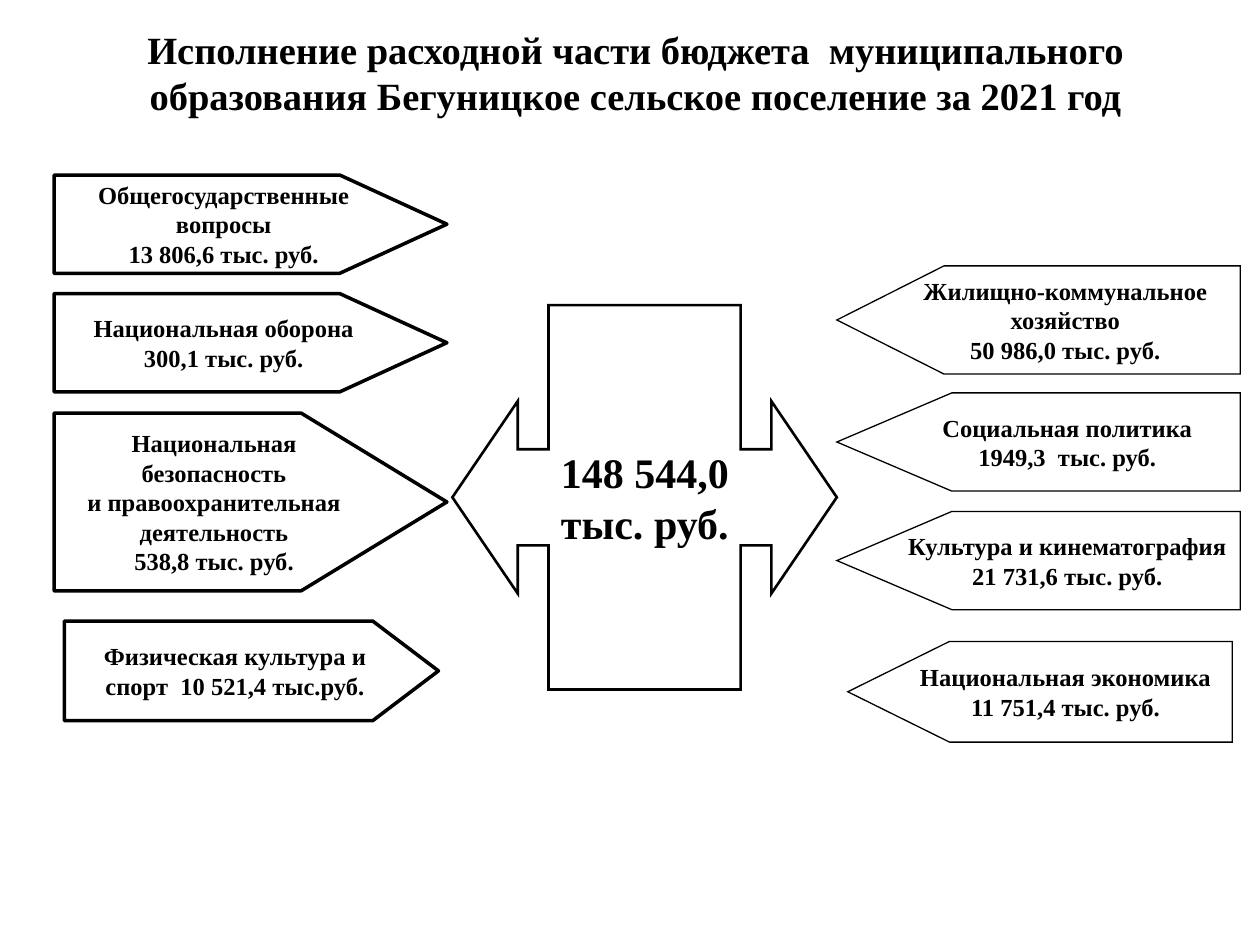
"""Builds the slide on budget spending of the Begunitskoye settlement for 2021."""
from lxml.etree import SubElement
from pptx import Presentation
from pptx.dml.color import RGBColor
from pptx.enum.shapes import MSO_SHAPE
from pptx.enum.text import MSO_ANCHOR, PP_ALIGN
from pptx.oxml.ns import qn
from pptx.util import Cm, Pt

COLORS = {"ink": "000000", "paper": "FFFFFF"}
FONT = "Times New Roman"


def write_text(shape, lines, size, anchor=MSO_ANCHOR.MIDDLE, wrap=True):
    frame = shape.text_frame
    frame.text = "\n".join(lines)
    frame.word_wrap = wrap
    frame.vertical_anchor = anchor
    for para in frame.paragraphs:
        para.alignment = PP_ALIGN.CENTER
        for span in para.runs:
            span.font.name = FONT
            span.font.size = Pt(size)
            span.font.bold = True
            span.font.color.rgb = RGBColor.from_string(COLORS["ink"])


def add_outlined(kind, place, adjustments, line_width, rotation=0):
    shape = slide.shapes.add_shape(kind, *[Cm(length) for length in place])
    shape.shadow.inherit = False
    shape.rotation = rotation
    for index, value in enumerate(adjustments):
        shape.adjustments[index] = value
    shape.fill.solid()
    shape.fill.fore_color.rgb = RGBColor.from_string(COLORS["paper"])
    shape.line.color.rgb = RGBColor.from_string(COLORS["ink"])
    shape.line.width = Pt(line_width)
    join = "a:miter" if rotation else "a:round"
    SubElement(shape.line._get_or_add_ln(), qn(join))
    return shape


deck = Presentation()
deck.slide_width, deck.slide_height = Cm(25.4), Cm(19.05)
slide = deck.slides.add_slide(deck.slide_layouts[6])

title = slide.shapes.add_textbox(Cm(1), Cm(0.4), Cm(23.62), Cm(1.98))
title_text = (
    "Исполнение расходной части бюджета  муниципального "
    "образования Бегуницкое сельское поселение за 2021 год"
)
write_text(title, [title_text], 22, MSO_ANCHOR.BOTTOM)
title.text_frame.margin_left = title.text_frame.margin_right = 0
title.text_frame.margin_bottom = 0

total = add_outlined(
    MSO_SHAPE.UP_DOWN_ARROW_CALLOUT,
    (9.12, 6.15, 7.75, 7.75),
    (0.25, 0.25, 0.17, 0.5),
    1.5,
    270,
)
write_text(total, ["148 544,0", "тыс. руб."], 24, wrap=False)
total.text_frame._txBody.bodyPr.set("vert", "eaVert")

right_items = [
    ((16.87, 5.36, 8.13, 2.18), 0.99, True,
     ["Жилищно-коммунальное хозяйство", "50 986,0 тыс. руб."]),
    ((16.87, 7.92, 8.13, 1.98), 1.17, False,
     ["Социальная политика", "1949,3  тыс. руб."]),
    ((16.87, 10.31, 8.13, 1.98), 1.17, True,
     ["Культура и кинематография", "21 731,6 тыс. руб."]),
    ((17.09, 12.93, 7.75, 2.03), 1.01, False,
     ["Национальная экономика", "11 751,4 тыс. руб."]),
]
for place, point, wrap, lines in right_items:
    box = add_outlined(MSO_SHAPE.PENTAGON, place, [point], 0.75, 180)
    write_text(box, lines, 14, wrap=wrap)
    box.text_frame._txBody.bodyPr.set("rot", "10800000")

left_items = [
    ((1.09, 3.53, 7.92, 1.98), 1.09,
     ["Общегосударственные вопросы", "13 806,6 тыс. руб."]),
    ((1.09, 5.92, 7.92, 1.98), 1.09,
     ["Национальная оборона", "300,1 тыс. руб."]),
    ((1.09, 8.33, 7.92, 3.58), 0.82,
     ["Национальная безопасность", "и правоохранительная деятельность",
      "538,8 тыс. руб."]),
    ((1.3, 12.52, 7.54, 2.01), 0.66,
     ["Физическая культура и спорт  10 521,4 тыс.руб."]),
]
for place, point, lines in left_items:
    box = add_outlined(MSO_SHAPE.PENTAGON, place, [point], 2)
    write_text(box, lines, 14)

deck.save("out.pptx")
